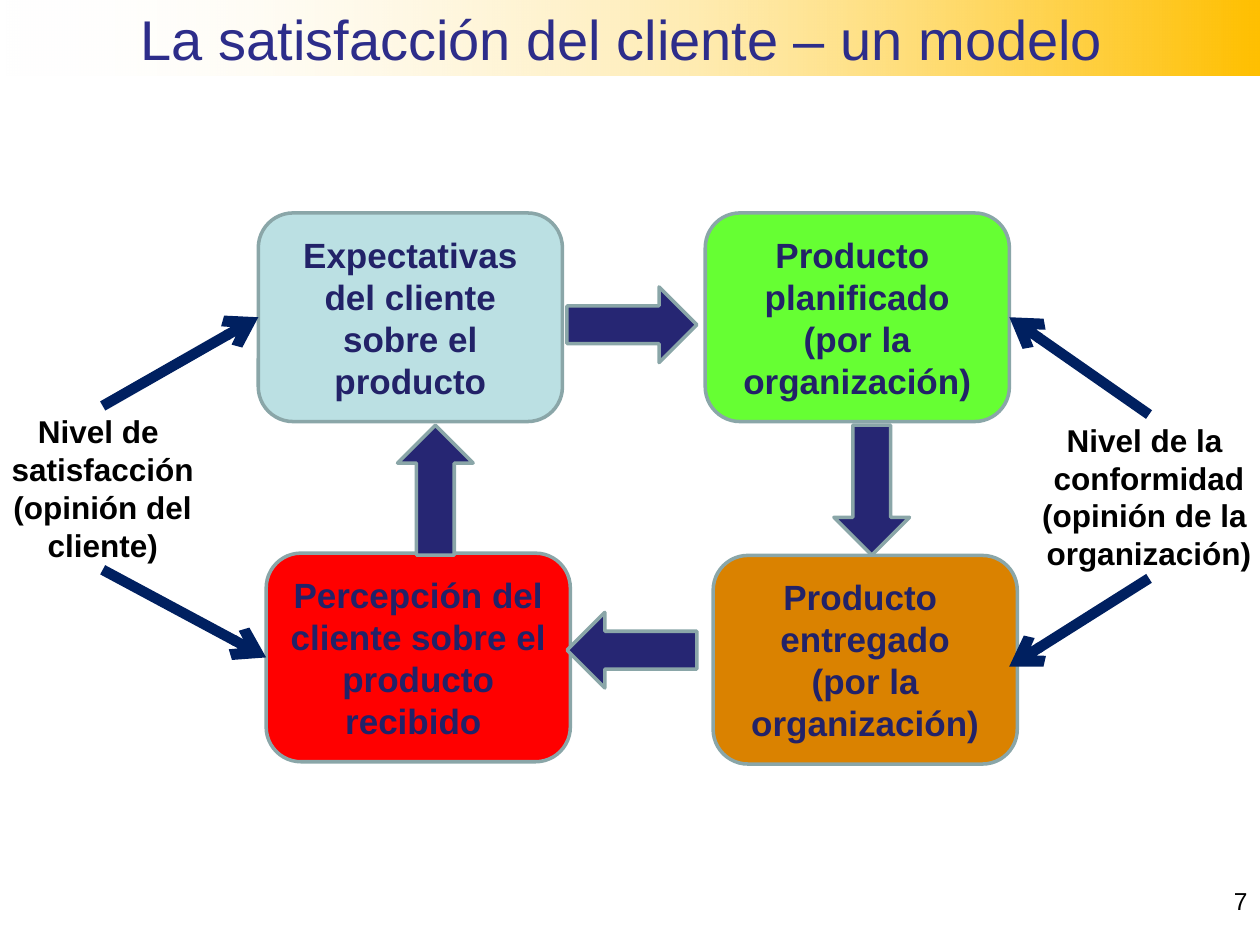
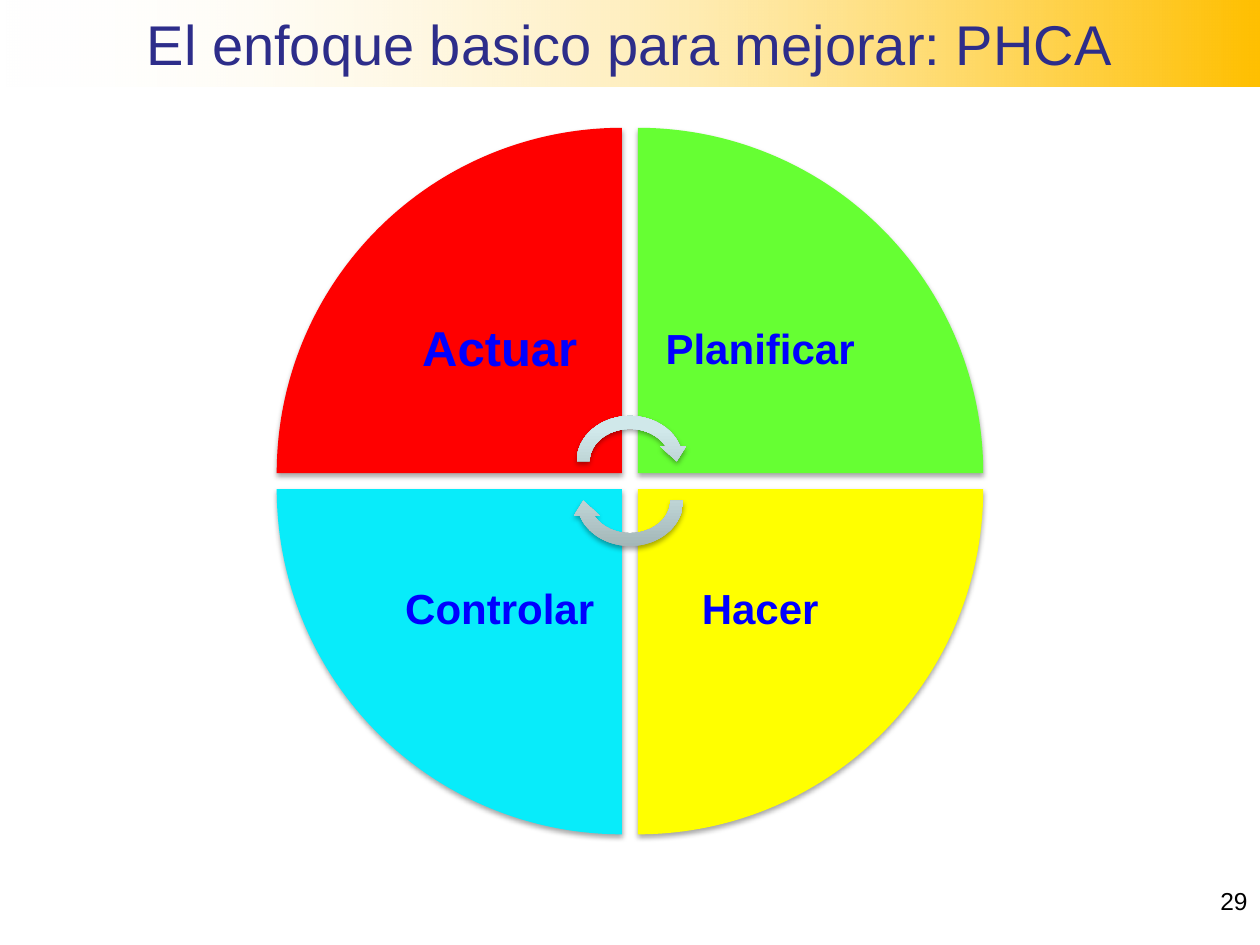
from lxml.etree import SubElement
from pptx import Presentation
from pptx.dml.color import RGBColor
from pptx.enum.shapes import MSO_CONNECTOR, MSO_SHAPE
from pptx.enum.text import MSO_ANCHOR, MSO_AUTO_SIZE, PP_ALIGN
from pptx.oxml.ns import qn
from pptx.util import Pt

PAGE_WIDTH, PAGE_HEIGHT = 720, 540
TITLE, NAVY, ARROW, LINK = "2D2D8A", "222268", "262673", "002060"
BLACK, BLUE, OUTLINE = "000000", "0000FF", "8AA6A8"
RED, GREEN, YELLOW, CYAN = "FF0000", "66FF33", "FFFF00", "08ECFA"
PALE, ORANGE = "BBE0E3", "DA8200"
BAND_STOPS = [(0, "FFFFFF", 0), (100, "FFC000", 100)]
CYCLE_STOPS = [(0, "A0B3B4", 100), (80, "D0E8EA", 100), (100, "D0EAEC", 100)]


def color(value):
    return RGBColor.from_string(value)


def write(shape, text, size=20, ink=BLACK, bold=False, align=PP_ALIGN.CENTER,
          anchor=MSO_ANCHOR.MIDDLE, wrap=True, spacing=None):
    """Fill a shape with text; \\n starts a paragraph and \\v breaks a line."""
    frame = shape.text_frame
    frame.word_wrap = wrap
    frame.vertical_anchor = anchor
    frame.text = text
    for para in frame.paragraphs:
        para.alignment = align
        if spacing:
            para.line_spacing = spacing
        for span in para.runs:
            span.font.name = "Arial"
            span.font.size = Pt(size)
            span.font.bold = bold
            span.font.color.rgb = color(ink)


class Deck:
    def __init__(self):
        self.deck = Presentation()
        self.deck.slide_width = Pt(PAGE_WIDTH)
        self.deck.slide_height = Pt(PAGE_HEIGHT)
        self.page = None

    def add_page(self, title, number, band_height):
        self.page = self.deck.slides.add_slide(self.deck.slide_layouts[6])
        band = self.shape(MSO_SHAPE.RECTANGLE, 0, 0, PAGE_WIDTH, band_height)
        self.gradient(band, BAND_STOPS, 0)
        write(band, title, size=32, ink=TITLE)
        self.text(number, 552.2, 502.6, 167.8, 37.4, size=14,
                  align=PP_ALIGN.RIGHT, anchor=MSO_ANCHOR.TOP)

    def shape(self, kind, left, top, width, height, fill=None, outline=None,
              rotation=0):
        shape = self.page.shapes.add_shape(
            kind, Pt(left), Pt(top), Pt(width), Pt(height))
        shape.shadow.inherit = False
        shape.rotation = rotation
        if fill:
            shape.fill.solid()
            shape.fill.fore_color.rgb = color(fill)
        if outline:
            shape.line.color.rgb = color(outline)
            shape.line.width = Pt(2)
        else:
            shape.line.fill.background()
        return shape

    def gradient(self, shape, stops, angle):
        """Apply (position, colour, opacity) stops that stay fixed to the page."""
        shape.fill.gradient()
        shape.fill.gradient_angle = angle
        grad = shape._element.spPr.find(qn("a:gradFill"))
        grad.set("rotWithShape", "0")
        stop_list = grad.find(qn("a:gsLst"))
        stop_list.clear()
        for position, value, opacity in stops:
            stop = SubElement(stop_list, qn("a:gs"), pos=str(position * 1000))
            tint = SubElement(stop, qn("a:srgbClr"), val=value)
            if opacity < 100:
                SubElement(tint, qn("a:alpha"), val=str(opacity * 1000))

    def drop_shadow(self, shape):
        effects = shape._element.spPr.find(qn("a:effectLst"))
        shadow = SubElement(effects, qn("a:outerShdw"), blurRad=str(Pt(3.1)),
                            dist=str(Pt(1.8)), dir="5400000", rotWithShape="0")
        tint = SubElement(shadow, qn("a:srgbClr"), val=BLACK)
        SubElement(tint, qn("a:alpha"), val="35000")

    def text(self, text, left, top, width, height, inset=None, **style):
        box = self.page.shapes.add_textbox(
            Pt(left), Pt(top), Pt(width), Pt(height))
        write(box, text, **style)
        frame = box.text_frame
        if inset:
            frame.margin_left = frame.margin_right = Pt(inset)
            frame.margin_top = frame.margin_bottom = Pt(inset)
        if not frame.word_wrap:
            frame.auto_size = MSO_AUTO_SIZE.SHAPE_TO_FIT_TEXT
        return box

    def link(self, start, start_side, end=None, end_side=None, point=(0, 0)):
        """Draw an arrow from a shape's side to another shape's side or a point."""
        line = self.page.shapes.add_connector(
            MSO_CONNECTOR.STRAIGHT, 0, 0, Pt(point[0]), Pt(point[1]))
        line.begin_connect(start, start_side)
        if end is not None:
            line.end_connect(end, end_side)
        line.line.color.rgb = color(LINK)
        line.line.width = Pt(6)
        properties = line._element.spPr
        SubElement(properties.find(qn("a:ln")), qn("a:tailEnd"), type="arrow")
        SubElement(properties, qn("a:effectLst"))


def satisfaction_page(deck):
    deck.add_page("La satisfacción del cliente – un modelo ", "7", 43.2)

    stages = [
        (147.6, 121.7, PALE, "Expectativas del cliente sobre el producto"),
        (403, 121.7, GREEN, "Producto \vplanificado\n(por la organización)"),
        (152.1, 316.1, RED,
         "Percepción del cliente sobre el producto\nrecibido "),
        (407.5, 317.4, ORANGE,
         "Producto \ventregado\n(por la organización)"),
    ]
    boxes = []
    for left, top, fill, label in stages:
        box = deck.shape(MSO_SHAPE.ROUNDED_RECTANGLE, left, top, 173.8, 119.2,
                         fill, OUTLINE)
        write(box, label, ink=NAVY, bold=True)
        boxes.append(box)
    expected, planned, perceived, delivered = boxes

    for left, top, rotation in [(324, 164, 0), (324, 349.9, 180),
                                (461, 258.5, 90), (211.7, 258.5, 270)]:
        deck.shape(MSO_SHAPE.RIGHT_ARROW, left, top, 74.2, 43.2, ARROW,
                   OUTLINE, rotation)

    level = dict(size=18, bold=True, wrap=False, anchor=MSO_ANCHOR.TOP)
    satisfaction = deck.text("Nivel de \nsatisfacción\v(opinión del\vcliente)",
                             -1.4, 232, 120.2, 93.6, **level)
    conformity = deck.text(
        "Nivel de la \vconformidad\v(opinión de la \vorganización)",
        588.2, 236.9, 136.8, 93.6, **level)

    deck.link(satisfaction, 0, expected, 1)
    deck.link(satisfaction, 2, perceived, 1)
    deck.link(conformity, 0, planned, 3)
    deck.link(conformity, 2, point=(576.7, 380.9))


def improvement_page(deck):
    deck.add_page("El enfoque basico para mejorar: PHCA", "29", 49.7)

    center_x, center_y = 360, 274.9
    wedge, label_side, half_gap = 197.3, 139.7, 4.55
    # Column and row are 0 before the centre and 1 after it.
    quarters = [("Actuar", 0, 0, RED, 28), ("Planificar", 1, 0, GREEN, 24),
                ("Hacer", 1, 1, YELLOW, 24), ("Controlar", 0, 1, CYAN, 24)]

    def start(center, side, after):
        return center + half_gap if after else center - half_gap - side

    for index, (label, column, row, fill, size) in enumerate(quarters):
        quarter = deck.shape(
            MSO_SHAPE.PIE_WEDGE, start(center_x, wedge, column),
            start(center_y, wedge, row), wedge, wedge, fill,
            rotation=90 * index)
        deck.drop_shadow(quarter)
        deck.text(label, start(center_x, label_side, column),
                  start(center_y, label_side, row), label_side, label_side,
                  inset=size / 2, size=size, ink=BLUE, bold=True, spacing=0.9)

    for top, rotation in [(234, 0), (256.5, 180)]:
        turn = deck.shape(MSO_SHAPE.CIRCULAR_ARROW, center_x - 34.1, top,
                          68.2, 59.2, rotation=rotation)
        deck.gradient(turn, CYCLE_STOPS, 90)
        deck.drop_shadow(turn)


def main():
    deck = Deck()
    satisfaction_page(deck)
    improvement_page(deck)
    deck.deck.save("out.pptx")


if __name__ == "__main__":
    main()
